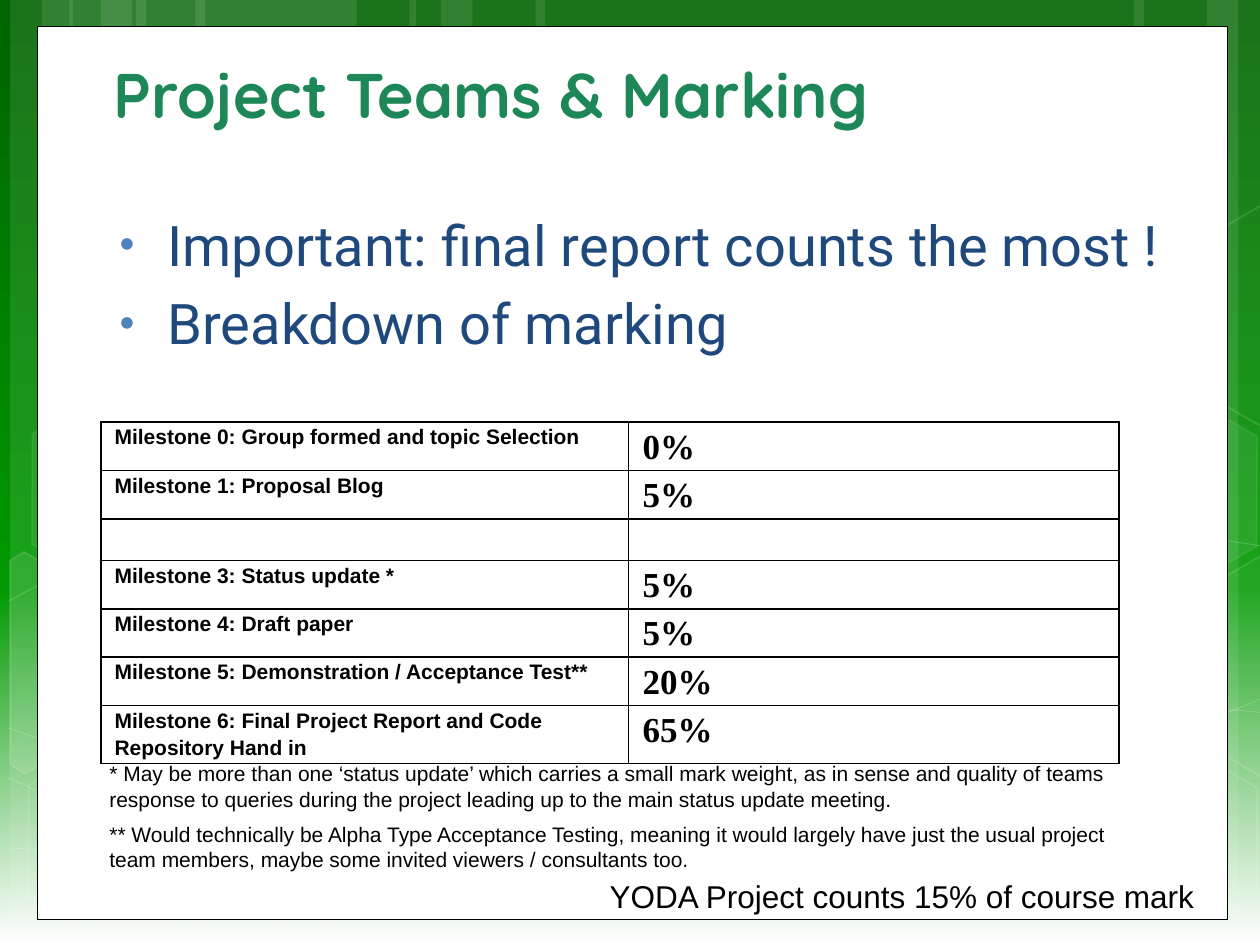
import dataclasses

import pptx
import pptx.dml.color
import pptx.enum.shapes
import pptx.enum.text
import pptx.oxml
import pptx.oxml.ns
import pptx.util

QN = pptx.oxml.ns.qn
Inches = pptx.util.Inches
KIND = pptx.enum.shapes.MSO_SHAPE
ANCHOR = pptx.enum.text.MSO_ANCHOR

@dataclasses.dataclass(frozen=True)
class Theme:
    """Hold the colours, fonts and type sizes."""
    white: str = "FFFFFF"
    black: str = "000000"
    green: str = "1D8757"
    navy: str = "1F497D"
    dot: str = "4F81BD"
    fade: tuple = ((0, "006400"), (62, "009900"), (100, "FFFFFF"))
    head: str = "Quicksand"
    body: str = "Roboto"
    sans: str = "Arial"
    serif: str = "Times New Roman"
    title: int = 36
    list: int = 32
    mark: int = 20
    total: int = 18
    small: int = 12

@dataclasses.dataclass(frozen=True)
class Box:
    """Hold a box in inches."""
    left: float
    top: float
    wide: float
    high: float

    def spot(self, x, y):
        """Return a point offset from the corner of the box."""
        return Inches(self.left + x), Inches(self.top + y)

    def rect(self):
        """Return the place and size of the box."""
        return *self.spot(0, 0), Inches(self.wide), Inches(self.high)

THEME = Theme()
STRIPS = [(1.08, 1.75), (0.08, 0.5), (0.33, 0.83), (1.55, 1.75), (0.55, 0.5), (0.8, 0.83),
          (7.33, 1.75), (9.58, 0.5), (9, 0.83), (4.25, 3.08), (3.25, 0.5), (3.5, 0.83)]
CURVES = [
    [(0.07, 6.73), (0.61, 6.76), (1.15, 6.79), (1.9, 6.78), (2.65, 6.77), (3.58, 6.75), (4.58, 6.65),
     (5.58, 6.55), (7, 6.36), (7.92, 6.17), (8.83, 5.98), (9.77, 5.68), (10.07, 5.51)],
    [(0.07, 4.77), (0.36, 4.61), (0.65, 4.46), (1.21, 4.31), (1.78, 4.16), (2.59, 3.94), (3.47, 3.87),
     (4.36, 3.8), (5.44, 3.79), (6.54, 3.87), (7.64, 3.95), (9.47, 4.26), (10.07, 4.34)],
    [(0.06, 6.17), (1.27, 6.72), (2.47, 7.27), (3.34, 7.49)],
    [(0.07, 5.78), (0.38, 5.89), (0.7, 6), (1.28, 6.16), (1.86, 6.31), (2.73, 6.56), (3.57, 6.73),
     (4.4, 6.9), (5.45, 7.08), (6.28, 7.18), (7.11, 7.29), (8, 7.33), (8.53, 7.36),
     (9.05, 7.4), (9.19, 7.38), (9.45, 7.38), (9.71, 7.37), (9.89, 7.35), (10.07, 7.34)],
    [(2.42, 7.49), (2.6, 7.29), (2.78, 7.09), (3.02, 6.91), (3.26, 6.73), (3.6, 6.53), (3.88, 6.39),
     (4.16, 6.25), (4.33, 6.19), (4.7, 6.09), (5.06, 5.99), (5.73, 5.85), (6.08, 5.78),
     (6.44, 5.71), (6.49, 5.71), (6.8, 5.69), (7.11, 5.66), (7.6, 5.63), (7.94, 5.62),
     (8.29, 5.61), (8.86, 5.62), (8.86, 5.62), (9.1, 5.62), (9.3, 5.62), (9.53, 5.62),
     (9.71, 5.63), (9.88, 5.64), (10.06, 5.66)]]
HEXES = [(3.34, 0.36, 4, 8), (4.97, 5.89, 6, 12), (0.11, 5.91, 0, 12), (0.14, 3.12, 7, 8),
         (1.74, 5.92, 0, 12), (8.34, 5.93, 0, 12), (8.34, 3.14, 7, 8)]
PARTS = [([(0.08, 4.45), (0.19, 4.38), (0.96, 4.82), (0.95, 5.7), (0.2, 6.14), (0.08, 6.07)], 10),
         ([(9.26, 4.85), (10.01, 4.41), (10.09, 4.46), (10.09, 6.13), (10.02, 6.17), (9.26, 5.73)], 4),
         ([(9.26, 2.07), (10.01, 1.63), (10.1, 1.68), (10.09, 3.35), (10.02, 3.39), (9.26, 2.95)], 0)]
MARKS = [("Milestone 0: Group formed and topic Selection", "0%"), ("Milestone 1: Proposal Blog", "5%"),
         ("", ""), ("Milestone 3: Status update *", "5%"), ("Milestone 4: Draft paper", "5%"),
         ("Milestone 5: Demonstration / Acceptance Test**", "20%"),
         ("Milestone 6: Final Project Report and Code Repository Hand in", "65%")]
NOTES = ["* May be more than one ‘status update’ which carries a small mark weight, as in sense and "
         "quality of teams response to queries during the project leading up to the main status update meeting.",
         "** Would technically be Alpha Type Acceptance Testing, meaning it would largely have just the "
         "usual project team members, maybe some invited viewers / consultants too."]

def node(tag, code=None, **attrs):
    """Make an XML element, with a colour inside if one is given."""
    item = pptx.oxml.parse_xml(f"<{tag} {pptx.oxml.ns.nsdecls('a')}/>")
    for name, value in attrs.items():
        item.set(name, str(value))
    if code:
        item.append(node("a:srgbClr", val=code))
    return item

def write(para, text, font=THEME.sans, size=THEME.small, color=THEME.black, bold=False):
    """Add formatted text to a paragraph."""
    run = para.add_run()
    run.text = text
    run.font.name, run.font.size, run.font.bold = font, pptx.util.Pt(size), bold
    run.font.color.rgb = pptx.dml.color.RGBColor.from_string(color)

def paint(shape, fill=0, line=0, width=1, edge=THEME.white):
    """Give a shape a white fill and a line at the given opacity."""
    shape.shadow.inherit = False
    shape.line.width = pptx.util.Pt(width)
    for part, level, code in ((shape.fill, fill, THEME.white), (shape.line.fill, line, edge)):
        part.background()
        if level:
            part.solid()
            part.fore_color.rgb = pptx.dml.color.RGBColor.from_string(code)
    props = shape.element.spPr
    for route, level in ((QN("a:solidFill"), fill), (f"{QN('a:ln')}/{QN('a:solidFill')}", line)):
        if 0 < level < 100:
            props.find(route)[0].append(node("a:alpha", val=level * 1000))

def trace(slide, box, points, close):
    """Draw an outline through points."""
    spots = [box.spot(x, y) for x, y in points]
    pen = slide.shapes.build_freeform(*spots[0])
    pen.add_line_segments(spots[1:], close=close)
    return pen.convert_to_shape()

def bend(shape):
    """Turn each three line steps of an outline into one cubic curve."""
    steps = list(shape.element.iter(QN("a:lnTo")))
    for at in range(0, len(steps), 3):
        curve = node("a:cubicBezTo")
        steps[at].addprevious(curve)
        for step in steps[at:at + 3]:
            curve.append(step[0])
            step.getparent().remove(step)
    return shape

def scene(slide, box):
    """Fill the backdrop with strips, curves and hexagons."""
    fill = slide.background.fill
    fill.gradient()
    fill.gradient_angle = 270
    stops = next(slide.element.iter(QN("a:gsLst")))
    stops.clear()
    stops.extend([node("a:gs", code, pos=place * 1000) for place, code in THEME.fade])
    for x, wide in STRIPS:
        strip = Box(box.left + x, box.top, wide, box.high)
        paint(slide.shapes.add_shape(KIND.RECTANGLE, *strip.rect()), fill=10)
    for knots in CURVES:
        paint(bend(trace(slide, box, knots, False)), line=20, width=0.5)
    for x, y, level, edge in HEXES:
        hexa = slide.shapes.add_shape(KIND.HEXAGON, *box.spot(x, y), Inches(1.75), Inches(1.52))
        hexa.adjustments[0] = 0.285
        hexa.rotation = 30
        paint(hexa, level, edge)
    for points, level in PARTS:
        paint(trace(slide, box, points, True), level, 12)

def panel(slide, box):
    """Place the white panel."""
    paint(slide.shapes.add_shape(KIND.RECTANGLE, *box.rect()), 100, 100, 0.5, THEME.black)

def sink(slide):
    """Move the drawn backdrop to the slide master."""
    tree = slide.slide_layout.slide_master.shapes.element
    shapes = [shape for shape in slide.shapes if not shape.is_placeholder]
    for at, shape in enumerate(shapes):
        next(shape.element.iter(QN("p:cNvPr"))).set("id", str(100 + at))
        tree.insert(2 + at, shape.element)

def settle(holder, box, anchor):
    """Move a placeholder to a box."""
    holder.left, holder.top, holder.width, holder.height = box.rect()
    holder.text_frame.auto_size = pptx.enum.text.MSO_AUTO_SIZE.NONE
    holder.text_frame.vertical_anchor = anchor
    return holder.text_frame

def title(slide, box, text):
    """Place the title."""
    para = settle(slide.shapes.title, box, ANCHOR.BOTTOM).paragraphs[0]
    para.alignment = pptx.enum.text.PP_ALIGN.LEFT
    write(para, text, font=THEME.head, size=THEME.title, color=THEME.green, bold=True)

def points(slide, box, lines):
    """Place the bullet list."""
    frame = settle(slide.placeholders[1], box, ANCHOR.TOP)
    for at, text in enumerate(lines):
        para = frame.add_paragraph() if at else frame.paragraphs[0]
        write(para, text, font=THEME.body, size=THEME.list, color=THEME.navy)
        props = para._p.get_or_add_pPr()
        props.set("marL", str(Inches(0.38)))
        props.set("indent", str(-Inches(0.38)))
        props.extend([node("a:buClr", THEME.dot), node("a:buSzPct", val=76000), node("a:buChar", char="•")])

def grid(slide, box, rows):
    """Place the table of marks."""
    table = slide.shapes.add_table(len(rows), 2, *box.rect()).table
    table.first_row = table.horz_banding = False
    table.columns[0].width, table.columns[1].width = Inches(4.19), Inches(3.89)
    looks = ({"size": THEME.small}, {"font": THEME.serif, "size": THEME.mark})
    for at, texts in enumerate(rows):
        table.rows[at].height = Inches(0.46 if at == len(rows) - 1 else 0.38 if texts[0] else 0.33)
        for cell, text, look in zip(table.rows[at].cells, texts, looks):
            cell.fill.solid()
            cell.fill.fore_color.rgb = pptx.dml.color.RGBColor.from_string(THEME.white)
            cell.margin_left = cell.margin_right = Inches(0.07)
            cell.margin_top = cell.margin_bottom = 0
            for place, side in enumerate("LRTB"):
                line = node(f"a:ln{side}", w=pptx.util.Pt(1))
                line.append(node("a:solidFill", THEME.black))
                cell._tc.get_or_add_tcPr().insert(place, line)
            if text:
                para = cell.text_frame.paragraphs[0]
                para.line_spacing = 1.15
                para._p.get_or_add_pPr().set("marL", str(Inches(0.04)))
                write(para, text, bold=True, **look)

def label(slide, box, text, wrap=True, **look):
    """Place a plain text box."""
    frame = slide.shapes.add_textbox(*box.rect()).text_frame
    frame.word_wrap = wrap
    write(frame.paragraphs[0], text, **look)

def main():
    """Build and save the slide."""
    deck = pptx.Presentation()
    deck.slide_width, deck.slide_height = Inches(10), Inches(7.5)
    slide = deck.slides.add_slide(deck.slide_layouts[1])
    scene(slide, Box(0, 0, 10, 7.5))
    panel(slide, Box(0.3, 0.21, 9.44, 7.09))
    sink(slide)
    title(slide, Box(0.8, 0.33, 8.42, 0.76), "Project Teams & Marking")
    points(slide, Box(0.85, 1.62, 8.76, 3.97),
           ["Important: final report counts the most !", "Breakdown of marking"])
    label(slide, Box(4.74, 6.91, 4.89, 0.4), "YODA Project counts 15% of course mark", False, size=THEME.total)
    grid(slide, Box(0.8, 3.35, 8.08, 2.56), MARKS)
    for at, text in enumerate(NOTES):
        label(slide, Box(0.77, 5.99 + 0.48 * at, 8.24, 0.5), text)
    deck.save("out.pptx")

if __name__ == "__main__":
    main()
